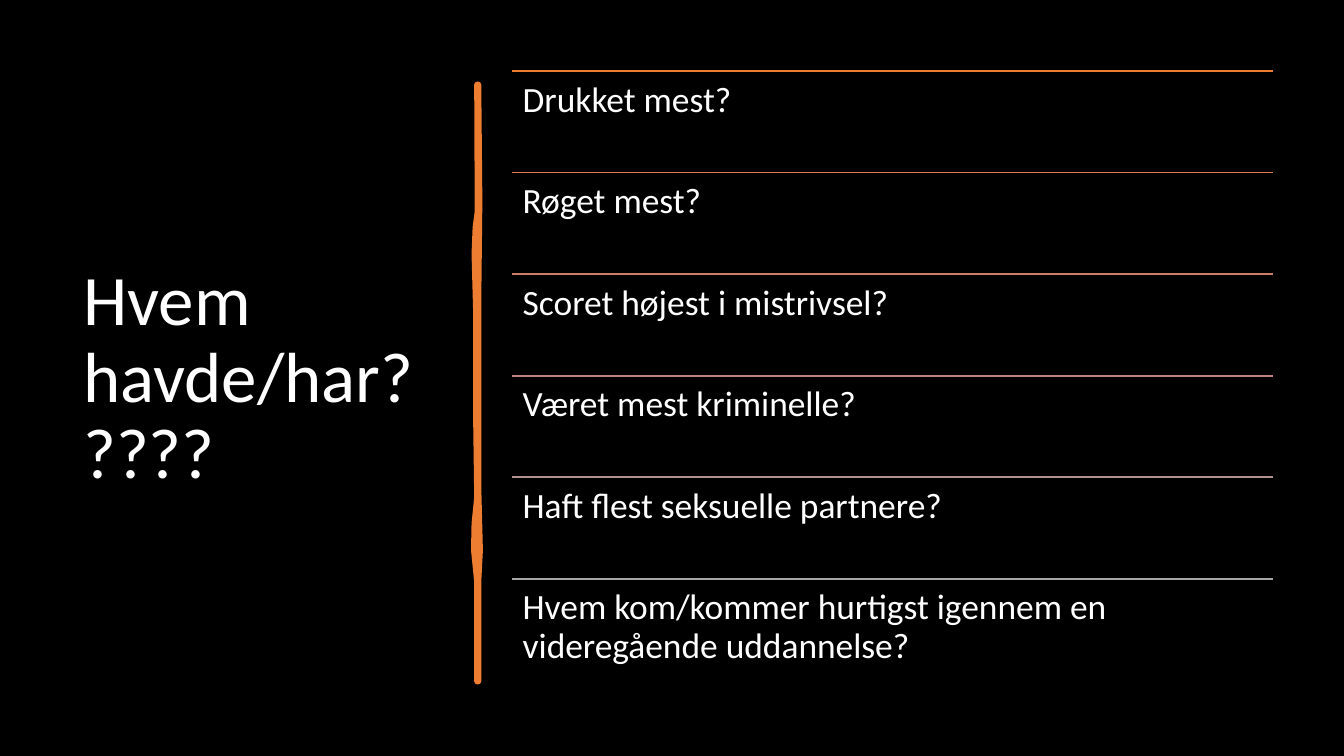
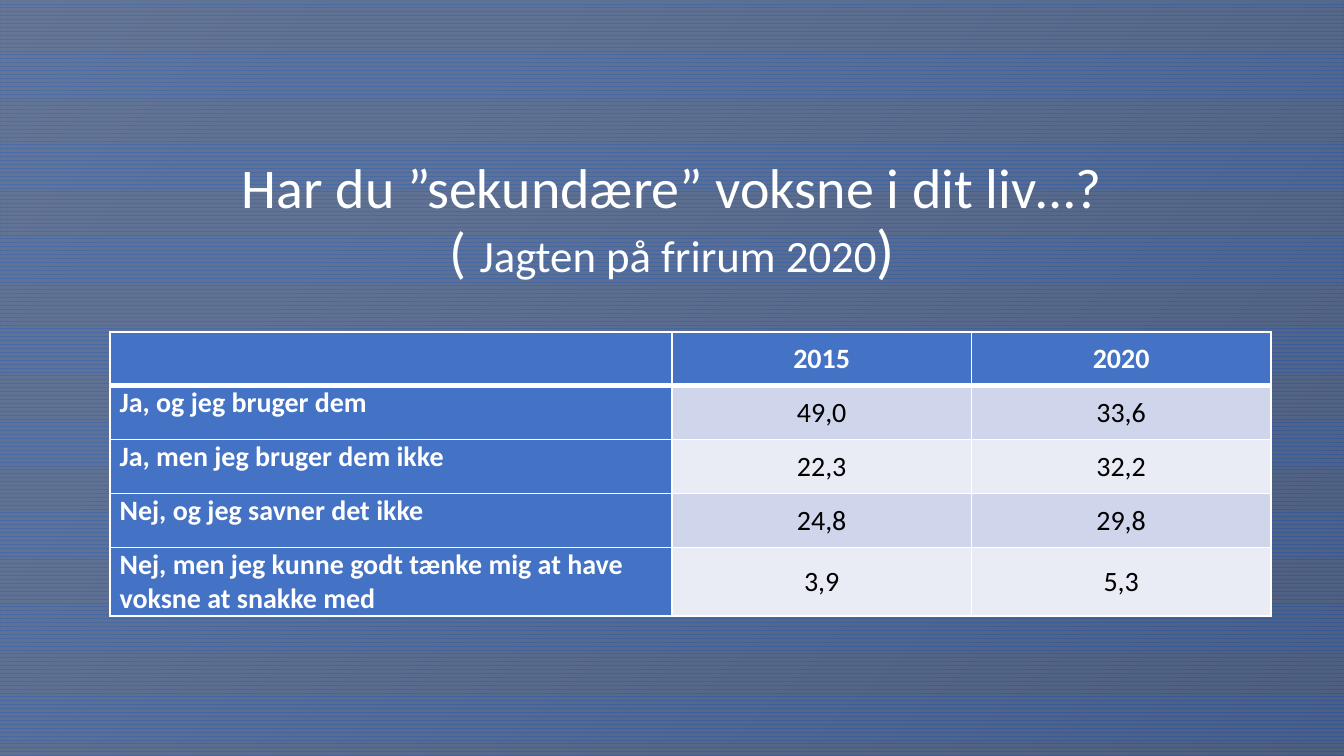
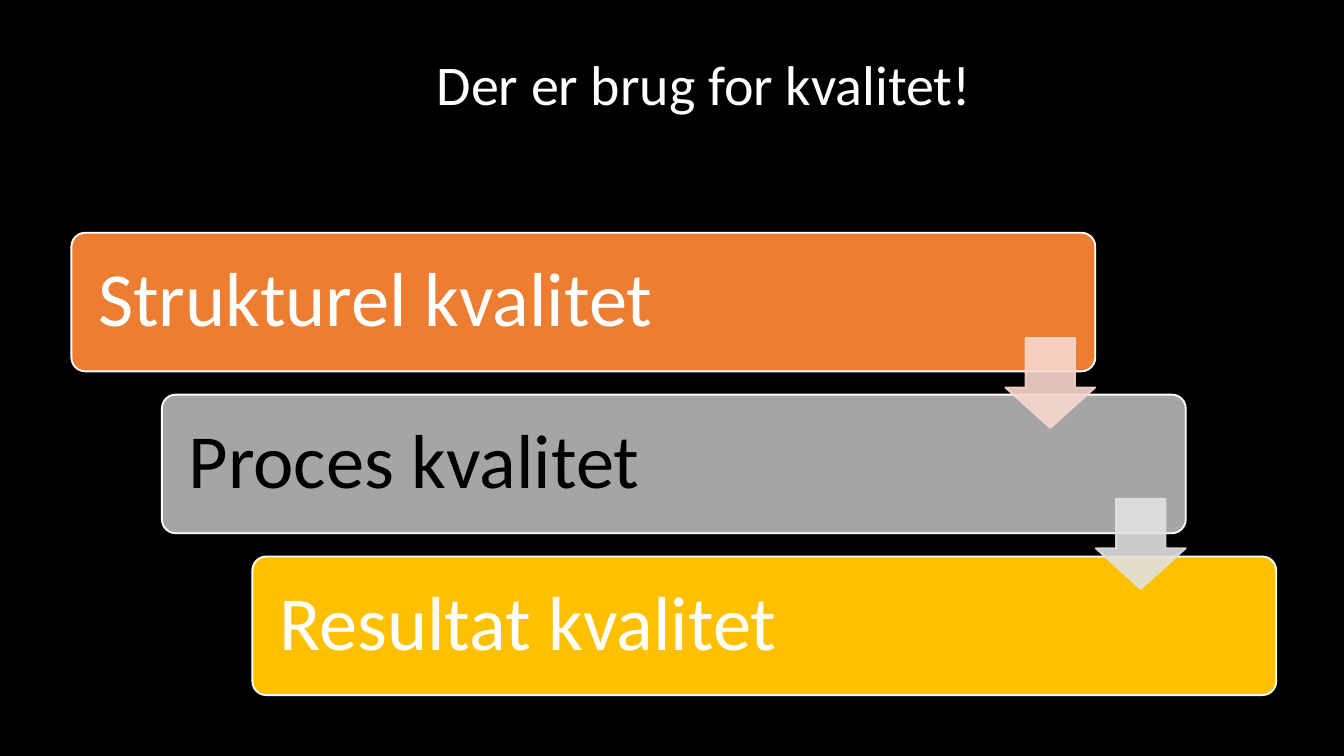
import lxml.etree
import pptx
import pptx.dml.color
import pptx.enum.dml
import pptx.enum.shapes
import pptx.enum.text
import pptx.oxml
import pptx.oxml.ns
import pptx.util

Cm = pptx.util.Cm
Pt = pptx.util.Pt
RGBColor = pptx.dml.color.RGBColor
ALIGN = pptx.enum.text.PP_ALIGN
ANCHOR = pptx.enum.text.MSO_ANCHOR
SHAPE = pptx.enum.shapes.MSO_SHAPE
qn = pptx.oxml.ns.qn

# Shared look
FONT = "Calibri"
BLACK = RGBColor(0x00, 0x00, 0x00)
WHITE = RGBColor(0xFF, 0xFF, 0xFF)
ORANGE = RGBColor(0xED, 0x7D, 0x31)
GRAY = RGBColor(0xA5, 0xA5, 0xA5)
GOLD = RGBColor(0xFF, 0xC0, 0x00)
PALE_ORANGE = RGBColor(0xF8, 0xD7, 0xCE)
PALE_GRAY = RGBColor(0xE1, 0xE1, 0xE1)
BLUE = RGBColor(0x44, 0x72, 0xC4)
BAND_DARK = RGBColor(0xCF, 0xD5, 0xEA)
BAND_LIGHT = RGBColor(0xE9, 0xEB, 0xF5)
PATTERN_BLUE = RGBColor(0x2F, 0x55, 0x97)
PATTERN_SLATE = RGBColor(0x4D, 0x5F, 0x81)
RULE_COLORS = [ORANGE, RGBColor(0xDC, 0x7A, 0x4B), RGBColor(0xCC, 0x7D, 0x64),
               RGBColor(0xBD, 0x86, 0x7B), RGBColor(0xB0, 0x93, 0x91), GRAY]


def write_text(frame, text, size=18, color=WHITE, bold=False, align=ALIGN.LEFT,
               anchor=ANCHOR.MIDDLE, spacing=0.9, inset=None):
    """Fill a text frame; text is a string or a list of (text, size) pieces."""
    frame.word_wrap = True
    frame.vertical_anchor = anchor
    if inset is not None:
        frame.margin_left = frame.margin_right = inset
        frame.margin_top = frame.margin_bottom = inset
    paragraph = frame.paragraphs[0]
    paragraph.alignment = align
    paragraph.line_spacing = spacing
    pieces = [(text, size)] if isinstance(text, str) else text
    for piece, piece_size in pieces:
        if piece == "\n":
            paragraph.add_line_break()
            continue
        run = paragraph.add_run()
        run.text = piece
        run.font.name = FONT
        run.font.size = Pt(piece_size)
        run.font.bold = bold
        run.font.color.rgb = color


def add_title_slide(text, left, top, width, height, **text_format):
    slide = presentation.slides.add_slide(presentation.slide_layouts[5])
    title = slide.shapes.title
    title.left, title.top, title.width, title.height = left, top, width, height
    title.text_frame.auto_size = pptx.enum.text.MSO_AUTO_SIZE.NONE
    write_text(title.text_frame, text, **text_format)
    return slide


presentation = pptx.Presentation()
presentation.slide_width = Cm(25.4)
presentation.slide_height = Cm(14.29)
master_fill = presentation.slide_master.background.fill
master_fill.solid()
master_fill.fore_color.rgb = BLACK

# Slide 1: questions under coloured rules
slide = add_title_slide("Hvem havde/har?????", Cm(1.32), Cm(1.35), Cm(7.11), Cm(11.63), size=38)

# Hand-drawn divider
divider_outline = [
    (9.04, 1.6), (9.06, 3.8), (9.04, 5.7), (9.04, 9.2), (9.07, 10.4), (9.04, 11),
    (9.04, 12.88), (9.02, 12.88), (9.02, 11), (8.96, 10.4), (8.97, 9.9), (9.02, 9.4),
    (9, 7.9), (9, 5.9), (8.97, 4.8), (8.99, 4.3), (9.03, 4), (9.02, 1.6)]
points = [(Cm(x), Cm(y)) for x, y in divider_outline]
builder = slide.shapes.build_freeform(*points[0])
builder.add_line_segments(points[1:], close=True)
divider = builder.convert_to_shape()
divider.shadow.inherit = False
divider.fill.solid()
divider.fill.fore_color.rgb = ORANGE
divider.line.color.rgb = ORANGE
divider.line.width = Pt(3.25)

questions = ["Drukket mest?", "Røget mest?", "Scoret højest i mistrivsel?",
             "Været mest kriminelle?", "Haft flest seksuelle partnere?",
             "Hvem kom/kommer hurtigst igennem en videregående uddannelse?"]
question_left, question_width, question_pitch = Cm(9.68), Cm(14.38), Cm(1.92)
for index, (question, rule_color) in enumerate(zip(questions, RULE_COLORS)):
    top = Cm(1.34) + index * question_pitch
    rule = slide.shapes.add_connector(pptx.enum.shapes.MSO_CONNECTOR.STRAIGHT, question_left, top,
                                      question_left + question_width, top)
    rule.line.color.rgb = rule_color
    rule.line.width = Pt(1)
    lxml.etree.SubElement(rule._element.spPr, qn("a:effectLst"))
    box = slide.shapes.add_textbox(question_left, top, question_width, question_pitch)
    write_text(box.text_frame, question, size=19, anchor=ANCHOR.TOP, inset=Cm(0.2))

# Slide 2: table on a patterned backdrop
title_pieces = [("Har du ”sekundære” voksne i dit liv…?", 30), ("\n", 30), ("(", 30),
                (" ", 32), ("Jagten på frirum 2020", 24), (")", 32)]
slide = add_title_slide(title_pieces, Cm(1.75), Cm(2.82), Cm(21.9), Cm(2.77), align=ALIGN.CENTER)

backdrops = []
for name in ("pattern", "glow"):
    backdrop = slide.shapes.add_shape(SHAPE.RECTANGLE, 0, 0, presentation.slide_width,
                                      presentation.slide_height)
    backdrop.shadow.inherit = False
    backdrop.line.fill.background()
    backdrops.append(backdrop)
pattern, glow = backdrops
pattern.fill.patterned()
pattern.fill.pattern = pptx.enum.dml.MSO_PATTERN.ZIG_ZAG
pattern.fill.fore_color.rgb = PATTERN_BLUE
pattern.fill.back_color.rgb = PATTERN_SLATE

glow_stops = [(0, "4D5F81"), (73, "ABC0E4"), (83, "ABC0E4"), (100, "C7D5ED")]
stops_xml = "".join(
    f'<a:gs pos="{position * 1000}"><a:srgbClr val="{color}"><a:alpha val="20000"/></a:srgbClr></a:gs>'
    for position, color in glow_stops)
gradient = pptx.oxml.parse_xml(
    f'<a:gradFill {pptx.oxml.ns.nsdecls("a")}><a:gsLst>{stops_xml}</a:gsLst>'
    '<a:path path="circle"><a:fillToRect l="100000" t="100000"/></a:path></a:gradFill>')
glow.fill.background()
glow_properties = glow._element.spPr
glow_properties.replace(glow_properties.find(qn("a:noFill")), gradient)

# Title goes in front of the backdrop
slide.shapes._spTree.append(slide.shapes.title._element)

rows = [["", "2015", "2020"],
        ["Ja, og jeg bruger dem", "49,0", "33,6"],
        ["Ja, men jeg bruger dem ikke", "22,3", "32,2"],
        ["Nej, og jeg savner det ikke", "24,8", "29,8"],
        ["Nej, men jeg kunne godt tænke mig at have voksne at snakke med", "3,9", "5,3"]]
table = slide.shapes.add_table(5, 3, Cm(2.08), Cm(6.27), Cm(21.94), Cm(5.35)).table
for column, width in zip(table.columns, (10.62, 5.66, 5.66)):
    column.width = Cm(width)
for row, height in zip(table.rows, (1.02, 1.02, 1.02, 1.02, 1.27)):
    row.height = Cm(height)
for row_index, row in enumerate(rows):
    for column_index, text in enumerate(row):
        cell = table.cell(row_index, column_index)
        cell.margin_left = cell.margin_right = Cm(0.18)
        cell.margin_top = cell.margin_bottom = 0
        is_heading = row_index == 0 or column_index == 0

        # Borders, with a heavy rule below the header row
        widths = {"lnL": 1, "lnR": 1, "lnT": 3 if row_index == 1 else 1,
                  "lnB": 3 if row_index == 0 else 1}
        for side, points_wide in widths.items():
            border = lxml.etree.SubElement(cell._tc.get_or_add_tcPr(), qn(f"a:{side}"),
                                           w=str(Pt(points_wide)))
            border_fill = lxml.etree.SubElement(border, qn("a:solidFill"))
            lxml.etree.SubElement(border_fill, qn("a:srgbClr"), val=str(WHITE))

        cell.fill.solid()
        band = BAND_DARK if row_index % 2 else BAND_LIGHT
        cell.fill.fore_color.rgb = BLUE if is_heading else band
        if text:
            write_text(cell.text_frame, text, size=15, bold=is_heading, spacing=1,
                       color=WHITE if is_heading else BLACK,
                       align=ALIGN.CENTER if column_index else ALIGN.LEFT)
            cell.vertical_anchor = ANCHOR.MIDDLE if column_index else ANCHOR.TOP

# Slide 3: staircase of quality levels
slide = add_title_slide("Der er brug for kvalitet!", Cm(2.84), Cm(0.74), Cm(20.93), Cm(1.83),
                        size=30, align=ALIGN.CENTER)

step_right, step_down = Cm(1.71), Cm(3.06)
levels = [("Strukturel kvalitet", ORANGE, WHITE), ("Proces kvalitet", GRAY, BLACK),
          ("Resultat kvalitet", GOLD, WHITE)]
for index, (level, fill_color, text_color) in enumerate(levels):
    bar = slide.shapes.add_shape(SHAPE.ROUNDED_RECTANGLE, Cm(1.35) + index * step_right,
                                 Cm(4.4) + index * step_down, Cm(19.35), Cm(2.62))
    bar.adjustments[0] = 0.1
    bar.shadow.inherit = False
    bar.fill.solid()
    bar.fill.fore_color.rgb = fill_color
    bar.line.color.rgb = WHITE
    bar.line.width = Pt(1)
    write_text(bar.text_frame, level, size=41, color=text_color, inset=Cm(0.43))

for index, arrow_color in enumerate((PALE_ORANGE, PALE_GRAY)):
    arrow = slide.shapes.add_shape(SHAPE.DOWN_ARROW, Cm(19) + index * step_right,
                                   Cm(6.39) + index * Cm(3.04), Cm(1.7), Cm(1.7))
    arrow.adjustments[0] = 0.55
    arrow.adjustments[1] = 0.45
    arrow.shadow.inherit = False
    arrow.fill.solid()
    arrow.fill.fore_color.rgb = arrow_color
    arrow.line.color.rgb = arrow_color
    arrow.line.width = Pt(1)
    for color in list(arrow._element.spPr.iter(qn("a:srgbClr"))):
        lxml.etree.SubElement(color, qn("a:alpha"), val="90000")

presentation.save("out.pptx")
